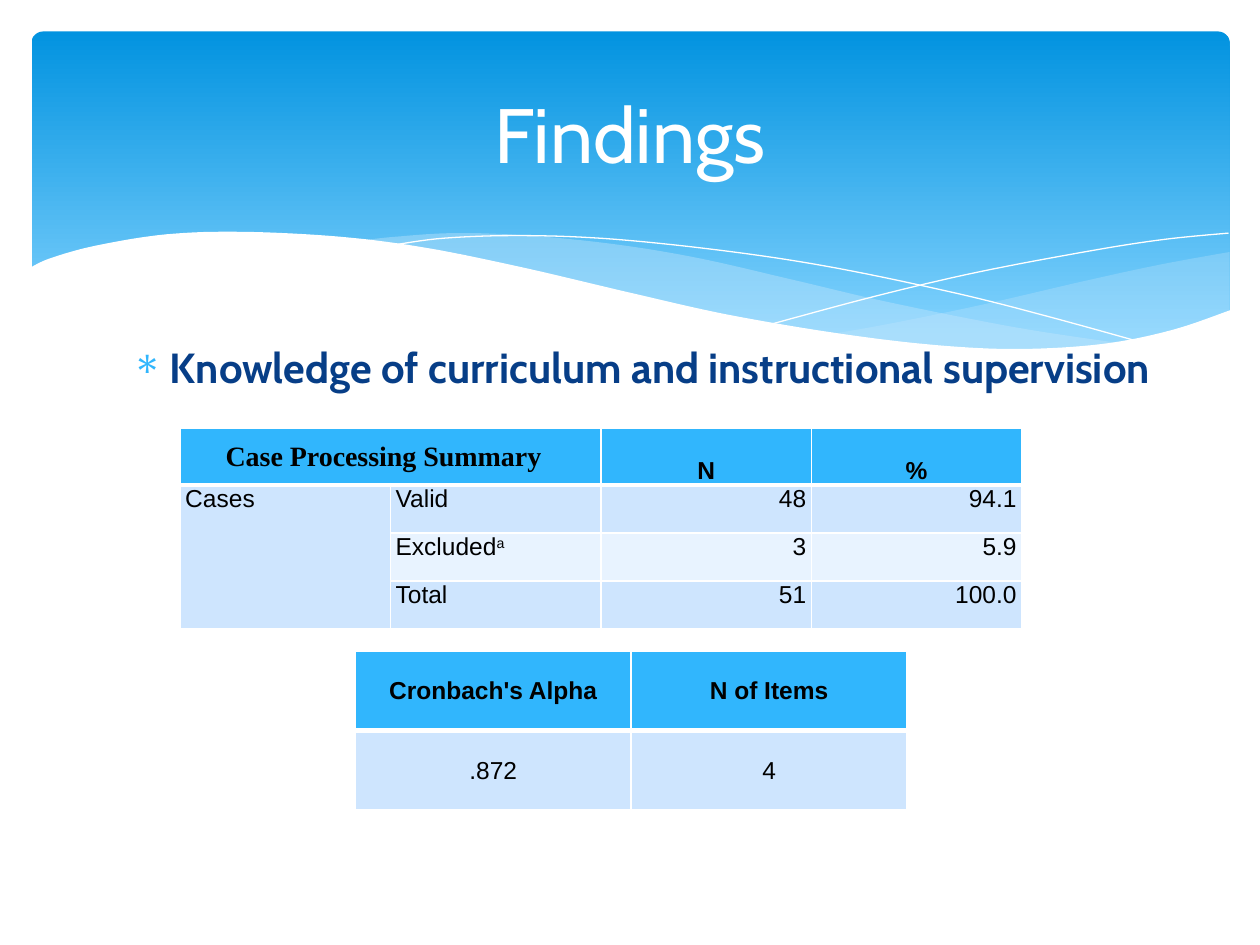
from dataclasses import dataclass
from typing import Optional

import lxml.etree
import pptx
import pptx.dml.color
import pptx.enum.shapes
import pptx.enum.text
import pptx.oxml.ns
import pptx.util

Inches = pptx.util.Inches
Pt = pptx.util.Pt
qn = pptx.oxml.ns.qn
ALIGN = pptx.enum.text.PP_ALIGN
ANCHOR = pptx.enum.text.MSO_ANCHOR
Point = tuple[float, float]

COLORS = {
    "white": "FFFFFF", "black": "000000", "navy": "073E87",
    "sky_top": "0293E0", "sky_bottom": "83D3FE", "mist": "C6E7FC",
    "header": "31B6FD", "band": "CEE5FE", "pale": "E8F3FF",
}


@dataclass
class Wave:
    curves: list[list[Point]]
    fill: Optional[str] = None
    opacity: int = 100


@dataclass
class Entry:
    text: str
    align: ALIGN = ALIGN.LEFT
    anchor: ANCHOR = ANCHOR.TOP
    fill: str = "band"
    bold: bool = False
    font: str = "Arial"
    size: int = 14
    superscript: str = ""


@dataclass
class Grid:
    left: float
    top: float
    column_width: float
    row_heights: list[float]
    rows: list[list[Optional[Entry]]]
    merges: list[tuple[int, int, int, int]]


def rgb(name: str) -> pptx.dml.color.RGBColor:
    return pptx.dml.color.RGBColor.from_string(COLORS[name])


def smooth(knots: list[Point], steps: int = 8) -> list[Point]:
    padded = [knots[0], *knots, knots[-1]]
    points = [knots[0]]
    for a, b, c, d in zip(padded, padded[1:], padded[2:], padded[3:]):
        for step in range(1, steps + 1):
            t = step / steps
            points.append(tuple(
                0.5 * (2 * q + (r - p) * t + (2 * p - 5 * q + 4 * r - s) * t**2
                       + (3 * q - p - 3 * r + s) * t**3)
                for p, q, r, s in zip(a, b, c, d)))
    return points


def draw_wave(shapes, wave: Wave) -> None:
    points = [(Inches(x), Inches(y)) for curve in wave.curves for x, y in smooth(curve)]
    builder = shapes.build_freeform(*points[0])
    builder.add_line_segments(points[1:], close=wave.fill is not None)
    outline = builder.convert_to_shape()
    outline.shadow.inherit = False
    if wave.fill is None:
        outline.fill.background()
        outline.line.color.rgb = rgb("white")
        outline.line.width = Pt(0)
        return
    outline.line.fill.background()
    outline.fill.solid()
    outline.fill.fore_color.rgb = rgb(wave.fill)
    if wave.opacity < 100:
        color = next(outline._element.spPr.iter(qn("a:srgbClr")))
        lxml.etree.SubElement(color, qn("a:alpha"), val=str(wave.opacity * 1000))


def draw_banner(shapes) -> None:
    banner = shapes.add_shape(pptx.enum.shapes.MSO_SHAPE.ROUNDED_RECTANGLE,
                              Inches(0.25), Inches(0.25), Inches(9.51), Inches(2.7))
    banner.adjustments[0] = 0.034
    banner.shadow.inherit = False
    banner.line.fill.background()
    banner.fill.gradient()
    banner.fill.gradient_angle = 270
    stops = zip(banner.fill.gradient_stops, ("sky_top", "sky_bottom"), (0, 0.9))
    for stop, color, position in stops:
        stop.color.rgb = rgb(color)
        stop.position = position


def add_text(shapes, text: str, box: tuple, size: int, color: str, bold: bool = False):
    frame = shapes.add_textbox(*map(Inches, box)).text_frame
    frame.word_wrap = True
    paragraph = frame.paragraphs[0]
    paragraph.text = text
    font = paragraph.font
    font.name, font.size, font.bold = "Cabin", Pt(size), bold
    font.color.rgb = rgb(color)
    return frame


def add_bullet(paragraph, symbol: str, color: str) -> None:
    properties = paragraph._p.get_or_add_pPr()
    properties.set("marL", str(Inches(0.3)))
    properties.set("indent", str(Inches(-0.3)))
    bullet_color = lxml.etree.Element(qn("a:buClr"))
    lxml.etree.SubElement(bullet_color, qn("a:srgbClr"), val=COLORS[color])
    bullet_font = lxml.etree.Element(qn("a:buFont"), typeface="Symbol")
    bullet = lxml.etree.Element(qn("a:buChar"), char=symbol)
    spacing = len(properties.findall(qn("a:spcBef")))
    for index, part in enumerate((bullet_color, bullet_font, bullet), spacing):
        properties.insert(index, part)


def set_borders(cell, row: int) -> None:
    widths = {"L": 1, "R": 1, "T": 3 if row == 1 else 1, "B": 3 if row == 0 else 1}
    properties = cell._tc.get_or_add_tcPr()
    for index, (side, width) in enumerate(widths.items()):
        border = lxml.etree.Element(qn(f"a:ln{side}"), w=str(Pt(width)))
        fill = lxml.etree.SubElement(border, qn("a:solidFill"))
        lxml.etree.SubElement(fill, qn("a:srgbClr"), val=COLORS["white"])
        properties.insert(index, border)


def fill_cell(cell, entry: Entry) -> None:
    cell.vertical_anchor = entry.anchor
    cell.fill.solid()
    cell.fill.fore_color.rgb = rgb(entry.fill)
    paragraph = cell.text_frame.paragraphs[0]
    paragraph.add_run().text = entry.text
    if entry.superscript:
        mark = paragraph.add_run()
        mark.text = entry.superscript
        mark.font._element.set("baseline", "30000")
    paragraph.alignment = entry.align
    font = paragraph.font
    font.name, font.size, font.bold = entry.font, Pt(entry.size), entry.bold
    font.color.rgb = rgb("black")
    if entry.font == "Arial":
        paragraph.line_spacing = Pt(16)
        for margin in ("marL", "marR"):
            paragraph._p.get_or_add_pPr().set(margin, str(Inches(0.04)))


def draw_grid(shapes, grid: Grid) -> None:
    count = len(grid.rows[0])
    table = shapes.add_table(len(grid.rows), count, Inches(grid.left), Inches(grid.top),
                             Inches(grid.column_width * count),
                             Inches(sum(grid.row_heights))).table
    for column in table.columns:
        column.width = Inches(grid.column_width)
    for r, (height, entries) in enumerate(zip(grid.row_heights, grid.rows)):
        table.rows[r].height = Inches(height)
        for c, entry in enumerate(entries):
            cell = table.cell(r, c)
            cell.margin_left = cell.margin_right = cell.margin_top = cell.margin_bottom = 0
            set_borders(cell, r)
            if entry:
                fill_cell(cell, entry)
    for top, left, bottom, right in grid.merges:
        table.cell(top, left).merge(table.cell(bottom, right))


def heading(text: str, anchor: ANCHOR = ANCHOR.MIDDLE, **style) -> Entry:
    return Entry(text, ALIGN.CENTER, anchor, "header", True, **style)


def case_row(label: Entry, n: str, percent: str, first: Optional[Entry] = None) -> list:
    return [first, label, *(Entry(v, ALIGN.RIGHT, fill=label.fill) for v in (n, percent))]


WAVES = [
    Wave([[(9.76, 2), (9.21, 2.1), (8.61, 2.23), (7.79, 2.42), (7.06, 2.57), (6.61, 2.65)],
          [(6.61, 2.65), (7.19, 2.72), (7.69, 2.77), (8.14, 2.78), (8.63, 2.75),
           (9.05, 2.69), (9.42, 2.59), (9.76, 2.47)]], "mist", 29),
    Wave([[(8.93, 2.73), (8.07, 2.6), (7.06, 2.4), (6.29, 2.22), (5.55, 2.05), (4.89, 1.94),
           (4.2, 1.87), (3.61, 1.85), (3.13, 1.88), (2.86, 1.91)],
          [(2.86, 1.91), (3.62, 2.03), (4.49, 2.22), (5.3, 2.4), (6.18, 2.58), (6.95, 2.7),
           (7.61, 2.77), (8.18, 2.78), (8.93, 2.73)]], "mist", 40),
    Wave([[(3.09, 1.95), (3.53, 1.89), (4.16, 1.87), (4.89, 1.9), (5.82, 2), (6.65, 2.13),
           (7.6, 2.33), (8.31, 2.51), (9.07, 2.72)]]),
    Wave([[(6.13, 2.57), (6.95, 2.35), (7.76, 2.16), (8.66, 1.99), (9.24, 1.9), (9.75, 1.85)]]),
    Wave([[(9.77, 2.46), (9.3, 2.62), (8.75, 2.73), (8.09, 2.77), (7.44, 2.74), (6.68, 2.65),
           (5.79, 2.5), (5.03, 2.33), (4.18, 2.13), (3.4, 1.97), (2.71, 1.88), (1.93, 1.84),
           (1.32, 1.86), (0.76, 1.95), (0.4, 2.05), (0.23, 2.13)],
          [(0.23, 3.29)], [(9.77, 3.29)]], "white"),
]

CASE_SUMMARY = Grid(1.43, 3.4, 1.67, [0.45, 0.38, 0.38, 0.38], [
    [heading("Case Processing Summary  ", font="Times New Roman", size=16), None,
     heading("N", ANCHOR.BOTTOM), heading("%", ANCHOR.BOTTOM)],
    case_row(Entry("Valid"), "48", "94.1", Entry("Cases")),
    case_row(Entry("Excluded", fill="pale", superscript="a"), "3", "5.9"),
    case_row(Entry("Total"), "51", "100.0"),
], [(0, 0, 0, 1), (1, 0, 3, 0)])
RELIABILITY = Grid(2.82, 5.17, 2.19, [0.63, 0.63], [
    [heading("Cronbach's Alpha"), heading("N of Items")],
    [Entry(value, ALIGN.CENTER, ANCHOR.MIDDLE) for value in (".872", "4")],
], [])


def main() -> None:
    deck = pptx.Presentation()
    deck.slide_width, deck.slide_height = Inches(10), Inches(7.5)
    shapes = deck.slides.add_slide(deck.slide_layouts[6]).shapes
    draw_banner(shapes)
    for wave in WAVES:
        draw_wave(shapes, wave)
    topic = add_text(shapes, "Knowledge of curriculum and instructional supervision",
                     (0.95, 2.66, 8.41, 3.77), 24, "navy", True).paragraphs[0]
    topic.space_before = Pt(4.8)
    add_bullet(topic, "∗", "header")
    title = add_text(shapes, "Findings", (0.5, 0.37, 9, 1.37), 44, "white")
    title.vertical_anchor = ANCHOR.MIDDLE
    title.paragraphs[0].alignment = ALIGN.CENTER
    for grid in (CASE_SUMMARY, RELIABILITY):
        draw_grid(shapes, grid)
    deck.save("out.pptx")


if __name__ == "__main__":
    main()
